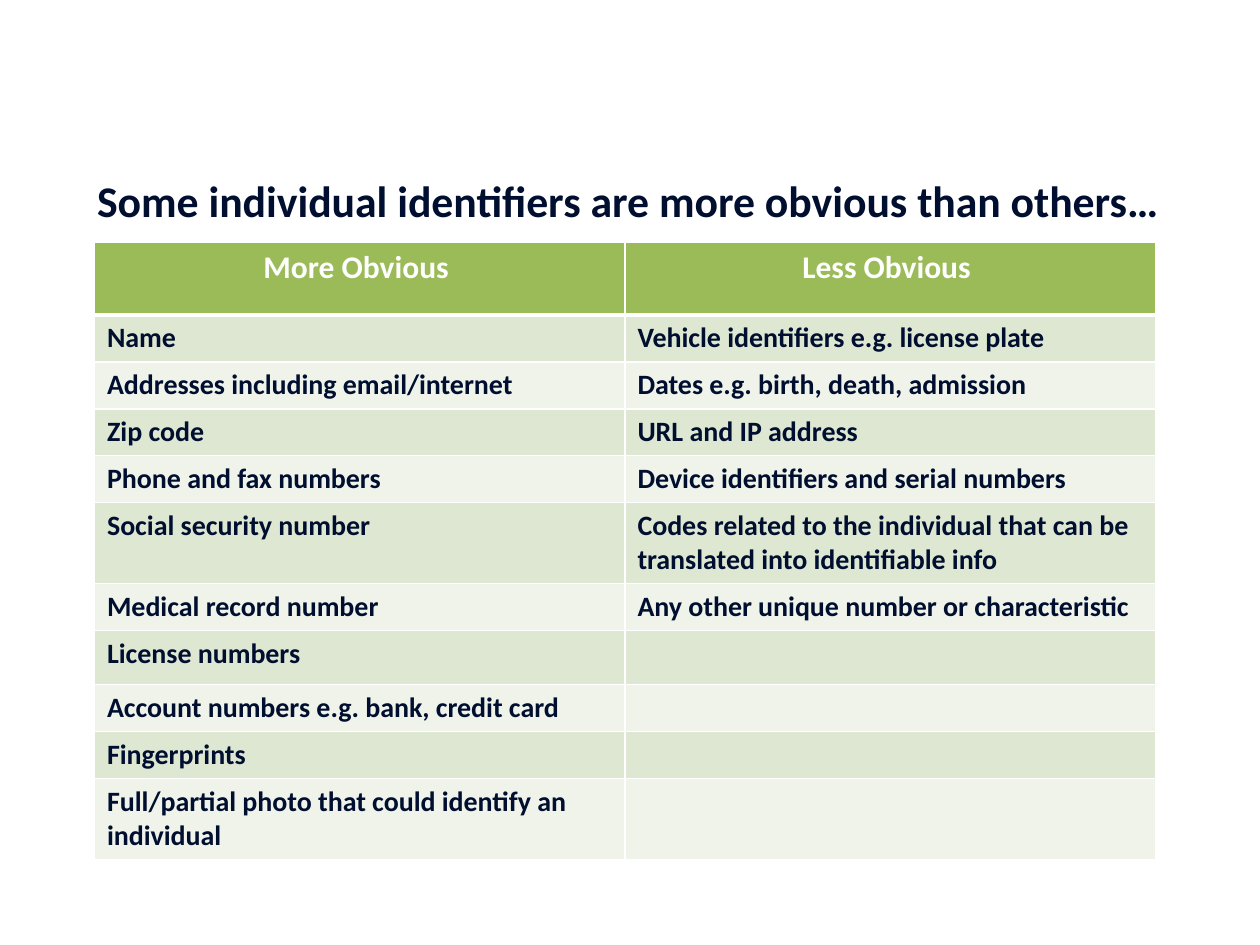
from lxml.etree import SubElement
from pptx import Presentation
from pptx.dml.color import RGBColor
from pptx.enum.text import PP_ALIGN
from pptx.oxml.ns import qn
from pptx.util import Inches, Pt

NAVY, WHITE, GREEN = "000E2F", "FFFFFF", "9BBB59"
BANDS = ("DEE7D1", "EFF3EA")
TITLE = "Some individual identifiers are more obvious than others…"
ROWS = [
    ("More Obvious ", "Less Obvious "),
    ("Name", "Vehicle identifiers e.g. license plate"),
    ("Addresses including email/internet", "Dates e.g. birth, death, admission"),
    ("Zip code", "URL and IP address"),
    ("Phone and fax numbers", "Device identifiers and serial numbers"),
    ("Social security number",
     "Codes related to the individual that can be translated into identifiable info"),
    ("Medical record number", "Any other unique number or characteristic"),
    ("License numbers", ""),
    ("Account numbers e.g. bank, credit card", ""),
    ("Fingerprints", ""),
    ("Full/partial photo that could identify an individual", ""),
]
HEIGHTS = [0.58, 0.25, 0.27, 0.28, 0.3, 0.32, 0.33, 0.43, 0.33, 0.18, 0.2]


def rgb(value):
    return RGBColor.from_string(value)


def write(tf, text, size=16, color=NAVY, bold=True, align=PP_ALIGN.LEFT, font="Calibri"):
    p = tf.paragraphs[0]
    p.alignment = align
    p.space_before = Pt(0)
    if not text:
        SubElement(p._p, qn("a:endParaRPr"), sz=str(size * 100))
        return p
    r = p.add_run()
    r.text = text
    r.font.name, r.font.size, r.font.bold = font, Pt(size), bold
    r.font.color.rgb = rgb(color)
    return p


class Deck:
    def __init__(self, width, height):
        self.prs = Presentation()
        self.prs.slide_width, self.prs.slide_height = Inches(width), Inches(height)
        self.s = self.prs.slides.add_slide(self.prs.slide_layouts[1])
        title = self.s.shapes.title._element
        title.getparent().remove(title)

    def body(self, text, x, y, w, h, **style):
        sp = self.s.placeholders[1]
        sp.left, sp.top, sp.width, sp.height = map(Inches, (x, y, w, h))
        p = write(sp.text_frame, text, **style)
        pPr = p._p.get_or_add_pPr()
        pPr.set("marL", "0")
        pPr.set("indent", "0")
        SubElement(pPr, qn("a:buNone"))

    def border(self, cell, side, width):
        ln = SubElement(cell._tc.get_or_add_tcPr(), qn(f"a:ln{side}"), w=str(Pt(width)))
        SubElement(SubElement(ln, qn("a:solidFill")), qn("a:srgbClr"), val=WHITE)

    def cell(self, cell, text, fill, thick="", **style):
        for side in "LRTB":
            self.border(cell, side, 3 if side == thick else 1)
        cell.fill.solid()
        cell.fill.fore_color.rgb = rgb(fill)
        write(cell.text_frame, text, **style)

    def table(self, rows, heights, x, y, w, h):
        frame = self.s.shapes.add_table(len(rows), len(rows[0]), *map(Inches, (x, y, w, h)))
        for i, (texts, height) in enumerate(zip(rows, heights)):
            frame.table.rows[i].height = Inches(height)
            for j, text in enumerate(texts):
                cell = frame.table.cell(i, j)
                if i == 0:
                    self.cell(cell, text, GREEN, "B", size=18, color=WHITE,
                              align=PP_ALIGN.CENTER)
                else:
                    self.cell(cell, text, BANDS[(i - 1) % 2], "T" if i == 1 else "")
        frame.height = Inches(h)


def main():
    deck = Deck(10, 7.5)
    deck.body(TITLE, 0.67, 1.33, 8.68, 5.17, size=25)
    deck.table(ROWS, HEIGHTS, 0.75, 1.92, 8.42, 4.85)
    deck.prs.save("out.pptx")


if __name__ == "__main__":
    main()
